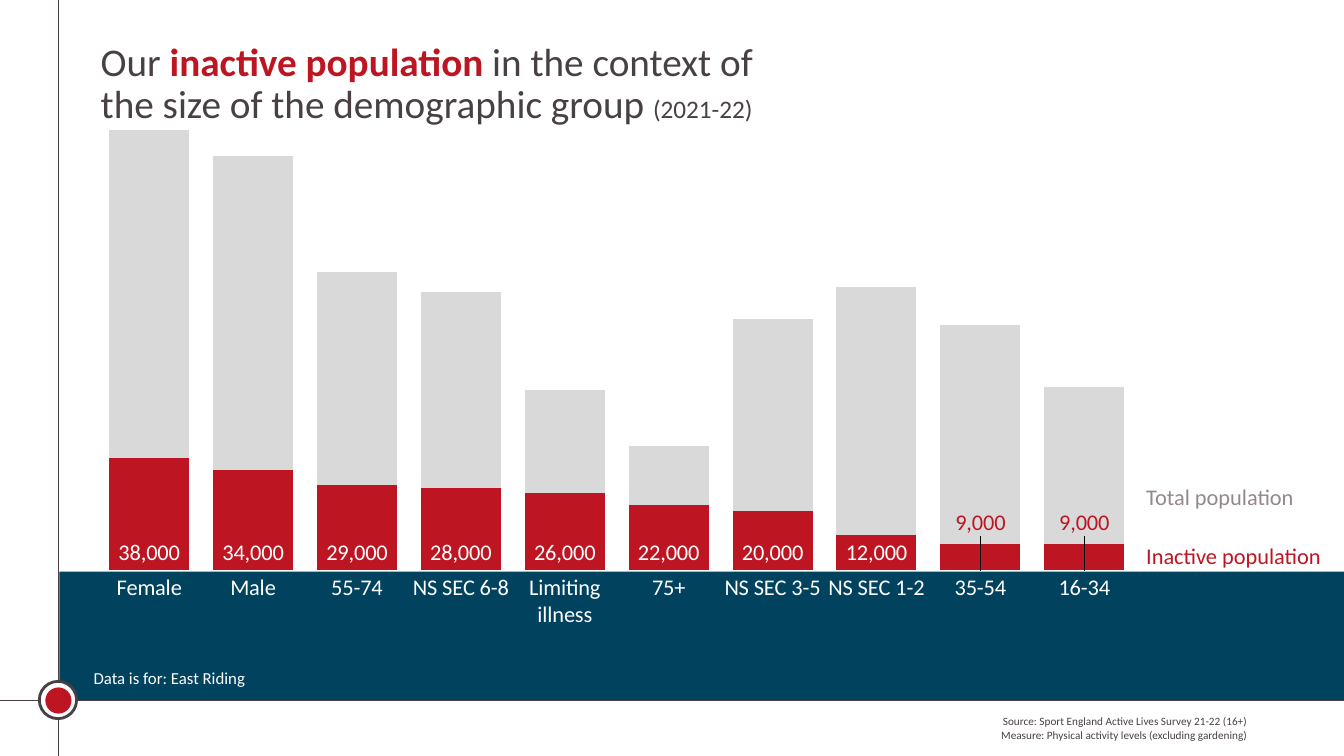
from lxml import etree
from pptx import Presentation
from pptx.chart.data import CategoryChartData
from pptx.dml.color import RGBColor
from pptx.enum import chart as ch, shapes, text
from pptx.oxml import parse_xml
from pptx.oxml.ns import nsdecls, qn
from pptx.util import Inches, Pt

FONT = "Calibri"
CHARCOAL = RGBColor(0x48, 0x40, 0x43)
RED = RGBColor(0xBD, 0x16, 0x22)
NAVY = RGBColor(0x01, 0x42, 0x5F)
TAUPE = RGBColor(0x95, 0x88, 0x8D)
GREY = RGBColor(0xD9, 0xD9, 0xD9)
WHITE = RGBColor(0xFF, 0xFF, 0xFF)

GROUPS = [
    ("Female", 38000, 111000),
    ("Male", 34000, 106000),
    ("55-74", 29000, 72000),
    ("NS SEC 6-8", 28000, 66000),
    ("Limiting illness", 26000, 35000),
    ("75+", 22000, 20000),
    ("NS SEC 3-5", 20000, 65000),
    ("NS SEC 1-2", 12000, 84000),
    ("35-54", 9000, 74000),
    ("16-34", 9000, 53000),
]
SMALL_GROUP = 10000  # bars below this carry their label above them
NUMBER_FORMAT = "#,##0"


def set_font(font, size, color, bold=False):
    font.name = FONT
    font.size = Pt(size)
    font.color.rgb = color
    font.bold = bold


def add_text(slide, box, paragraphs, size=16, color=CHARCOAL,
             align=text.PP_ALIGN.LEFT, line_spacing=None):
    """Each paragraph is a list of (words, overrides of the run format)."""
    frame = slide.shapes.add_textbox(*map(Inches, box)).text_frame
    frame.word_wrap = True
    for i, runs in enumerate(paragraphs):
        paragraph = frame.paragraphs[0] if i == 0 else frame.add_paragraph()
        paragraph.alignment = align
        paragraph.line_spacing = line_spacing
        for words, overrides in runs:
            run = paragraph.add_run()
            run.text = words
            set_font(run.font, **{"size": size, "color": color, **overrides})


def add_filled(slide, preset, box, fill, outline=None):
    shape = slide.shapes.add_shape(preset, *map(Inches, box))
    shape.shadow.inherit = False
    shape.fill.solid()
    shape.fill.fore_color.rgb = fill
    if outline is None:
        shape.line.fill.background()
    else:
        shape.line.color.rgb = outline
        shape.line.width = Pt(2)


def add_rule(slide, *ends):
    rule = slide.shapes.add_connector(
        shapes.MSO_CONNECTOR.STRAIGHT, *map(Inches, ends))
    rule.line.color.rgb = CHARCOAL
    rule.line.width = Pt(0.5)
    etree.SubElement(rule.element.spPr, qn("a:effectLst"))


def manual_layout(**settings):
    items = "".join(f'<c:{k} val="{v}"/>' for k, v in settings.items())
    return parse_xml(f'<c:layout {nsdecls("c")}><c:manualLayout>{items}'
                     '</c:manualLayout></c:layout>')


def raise_label(series, index):
    """Lift a point's label clear of its short bar and colour it red."""
    set_font(series.points[index].data_label.font, 16, RED)
    idx = series._element.xpath(f'c:dLbls/c:dLbl/c:idx[@val="{index}"]')[0]
    idx.addnext(parse_xml(f'<c:numFmt {nsdecls("c")} '
                          f'formatCode="{NUMBER_FORMAT}" sourceLinked="0"/>'))
    idx.addnext(manual_layout(x=0, y=-0.05))


def add_population_chart(slide):
    names, inactive, remainder = zip(*GROUPS)
    data = CategoryChartData(number_format=NUMBER_FORMAT)
    data.categories = names
    data.add_series("Series 1", inactive)
    data.add_series("Series 2", remainder)
    chart = slide.shapes.add_chart(
        ch.XL_CHART_TYPE.COLUMN_STACKED,
        *map(Inches, (0.58, 0.79, 10.69, 5.86)), data).chart
    chart.has_legend = False
    chart.has_title = False
    set_font(chart.font, 16, WHITE)

    values = chart.value_axis
    values.minimum_scale, values.maximum_scale = 0, 160000
    values.has_major_gridlines = False
    values.visible = False
    categories = chart.category_axis
    categories.major_tick_mark = ch.XL_TICK_MARK.NONE
    categories.format.line.fill.background()
    set_font(categories.tick_labels.font, 16, WHITE)

    plot = chart.plots[0]
    plot.gap_width, plot.overlap = 30, 100
    plot.vary_by_categories = False
    for series, color in zip(plot.series, (RED, GREY)):
        series.format.fill.solid()
        series.format.fill.fore_color.rgb = color

    inactive_series = plot.series[0]
    labels = inactive_series.data_labels
    labels.show_value = True
    labels.number_format = NUMBER_FORMAT
    labels.number_format_is_linked = False
    labels.position = ch.XL_LABEL_POSITION.INSIDE_BASE
    set_font(labels.font, 16, WHITE)
    for index, count in enumerate(inactive):
        if count < SMALL_GROUP:
            raise_label(inactive_series, index)

    plot_area = chart._chartSpace.chart.plotArea
    for old in plot_area.findall(qn("c:layout")):
        plot_area.remove(old)
    plot_area.insert(0, manual_layout(
        layoutTarget="inner", xMode="edge", yMode="edge",
        x=0.036, y=0.03, w=0.964, h=0.801))


def main():
    prs = Presentation()
    prs.slide_width, prs.slide_height = Inches(13.33), Inches(7.5)
    slide = prs.slides.add_slide(prs.slide_layouts[6])
    preset = shapes.MSO_SHAPE

    add_filled(slide, preset.RECTANGLE, (0.59, 5.67, 12.74, 1.28), NAVY)
    add_rule(slide, 0.58, 0, 0.58, 7.5)
    add_rule(slide, 0, 6.95, 13.33, 6.95)
    add_filled(slide, preset.OVAL, (0.39, 6.76, 0.37, 0.37), WHITE, CHARCOAL)
    add_filled(slide, preset.OVAL, (0.45, 6.82, 0.26, 0.26), RED)

    add_text(slide, (6, 7.04, 6.47, 0.37), [
        [("Source: Sport England Active Lives Survey 21-22 (16+)", {})],
        [("Measure: Physical activity levels (excluding gardening)", {})],
    ], size=8, align=text.PP_ALIGN.RIGHT)
    add_text(slide, (11.27, 5.33, 1.94, 0.37),
             [[("Inactive population", {})]], color=RED)
    add_text(slide, (11.27, 4.74, 1.71, 0.37),
             [[("Total population", {})]], color=TAUPE)
    add_text(slide, (0.9, 0.37, 7.15, 2.1), [[
        ("Our ", {}),
        ("inactive population ", {"color": RED, "bold": True}),
        ("in the context of the size of the demographic group ", {}),
        ("(2021-22)", {"size": 18}),
    ]], size=28, line_spacing=0.9)
    add_text(slide, (0.83, 6.58, 3.63, 0.3),
             [[("Data is for: East Riding", {})]], size=12, color=WHITE)
    add_population_chart(slide)

    prs.save("out.pptx")


if __name__ == "__main__":
    main()
